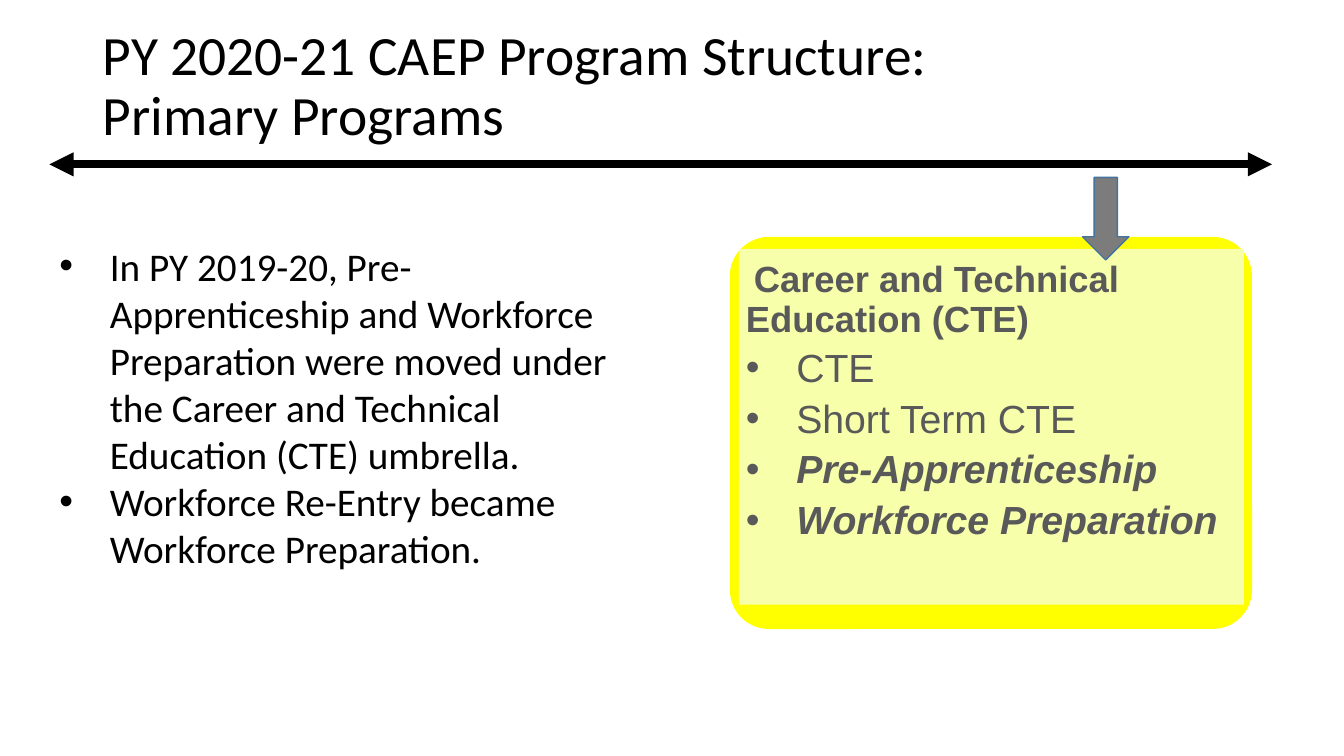
from lxml import etree
from pptx import Presentation
from pptx.dml.color import RGBColor
from pptx.enum import shapes, text
from pptx.oxml import ns
from pptx.util import Pt

BLACK = RGBColor(0x00, 0x00, 0x00)
YELLOW = RGBColor(0xFF, 0xFF, 0x00)
PALE_YELLOW = RGBColor(0xF7, 0xFF, 0xAB)
DARK_GRAY = RGBColor(0x59, 0x59, 0x59)
ARROW_GRAY = RGBColor(0x7C, 0x7C, 0x7C)
ARROW_EDGE = RGBColor(0x43, 0x73, 0x9E)

TITLE = "PY 2020-21 CAEP Program Structure:\vPrimary Programs"
CHANGES = [
    "In PY 2019-20, Pre-Apprenticeship and Workforce Preparation were moved "
    "under the Career and Technical Education (CTE) umbrella.",
    "Workforce Re-Entry became Workforce Preparation.",
]
PANEL_HEADING = "Career and Technical Education (CTE)"
PROGRAMS = [  # name, newly moved here
    ("CTE", False),
    ("Short Term CTE", False),
    ("Pre-Apprenticeship", True),
    ("Workforce Preparation", True),
]

# left, top, width, height
TITLE_BOX = (66.2, 25.2, 845.3, 74.9)
CHANGES_BOX = (35.3, 169.2, 419.8, 278.6)
CARD_BOX = (521.3, 169.2, 373, 280.1)
PANEL_BOX = (527.8, 177.8, 360.7, 254.2)
DOWN_ARROW_BOX = (773.3, 126.7, 33.1, 59)
RULE_LEFT, RULE_RIGHT, RULE_TOP = 35.3, 908.6, 117.4
BULLET_INDENT = 36
PANEL_INSET = 5
PANEL_SPARE_LINE = 35


def place(shape, box):
    shape.left, shape.top, shape.width, shape.height = map(Pt, box)


def write(frame, content, size, font="Calibri", color=BLACK, bold=False,
          italic=False, bullet=False, first_indent=0, spacing=1.0, before=0):
    """Fill the frame's first paragraph, or append one if it is taken."""
    paragraph = frame.paragraphs[0]
    if paragraph.text:
        paragraph = frame.add_paragraph()
    paragraph.text = content
    properties = paragraph._p.get_or_add_pPr()
    margin = BULLET_INDENT if bullet else 0
    properties.set("marL", str(Pt(margin)))
    properties.set("indent", str(Pt(-margin if bullet else first_indent)))
    if bullet:
        etree.SubElement(properties, ns.qn("a:buFont"), typeface="Arial")
        etree.SubElement(properties, ns.qn("a:buChar"), char="•")
    paragraph.alignment = text.PP_ALIGN.LEFT
    paragraph.line_spacing = spacing
    paragraph.space_before = Pt(before)
    for run in paragraph.runs:
        run.font.name, run.font.size = font, Pt(size)
        run.font.bold, run.font.italic = bold, italic
        run.font.color.rgb = color


def add_block(slide, kind, box, fill, edge=None):
    shape = slide.shapes.add_shape(kind, *map(Pt, box))
    shape.shadow.inherit = False
    shape.fill.solid()
    shape.fill.fore_color.rgb = fill
    if edge is None:
        shape.line.fill.background()
    else:
        shape.line.color.rgb = edge
        shape.line.width = Pt(1)
    return shape


def add_double_arrow(slide, left, right, top):
    connector = slide.shapes.add_connector(
        shapes.MSO_CONNECTOR.STRAIGHT, Pt(left), Pt(top), Pt(right), Pt(top))
    connector.line.color.rgb = BLACK
    connector.line.width = Pt(5.75)
    line = connector.line._get_or_add_ln()
    for end in ("a:headEnd", "a:tailEnd"):
        etree.SubElement(line, ns.qn(end), type="triangle")
    etree.SubElement(connector._element.spPr, ns.qn("a:effectLst"))


def main():
    presentation = Presentation()
    presentation.slide_width, presentation.slide_height = Pt(960), Pt(540)
    slide = presentation.slides.add_slide(presentation.slide_layouts[1])
    title, changes = slide.placeholders

    place(title, TITLE_BOX)
    title.text_frame.auto_size = text.MSO_AUTO_SIZE.NONE
    title.text_frame.vertical_anchor = text.MSO_ANCHOR.MIDDLE
    write(title.text_frame, TITLE, 39.6, spacing=0.9)

    place(changes, CHANGES_BOX)
    changes.text_frame.auto_size = text.MSO_AUTO_SIZE.NONE
    for change in CHANGES:
        write(changes.text_frame, change, 28, bullet=True)

    kinds = shapes.MSO_SHAPE
    card = add_block(slide, kinds.ROUNDED_RECTANGLE, CARD_BOX, YELLOW)
    card.adjustments[0] = 0.1
    panel = add_block(slide, kinds.RECTANGLE, PANEL_BOX, PALE_YELLOW)
    frame = panel.text_frame
    frame.word_wrap = True
    frame.vertical_anchor = text.MSO_ANCHOR.MIDDLE
    frame.margin_left = frame.margin_right = frame.margin_top = Pt(PANEL_INSET)
    frame.margin_bottom = Pt(PANEL_INSET + PANEL_SPARE_LINE)
    panel_format = {"font": "Arial", "color": DARK_GRAY, "spacing": 0.9}
    write(frame, PANEL_HEADING, 26, bold=True, first_indent=5.6, **panel_format)
    for name, moved in PROGRAMS:
        write(frame, name, 28, bold=moved, italic=moved, bullet=True,
              before=6, **panel_format)

    add_double_arrow(slide, RULE_LEFT, RULE_RIGHT, RULE_TOP)
    add_block(slide, kinds.DOWN_ARROW, DOWN_ARROW_BOX, ARROW_GRAY, ARROW_EDGE)
    presentation.save("out.pptx")


if __name__ == "__main__":
    main()
